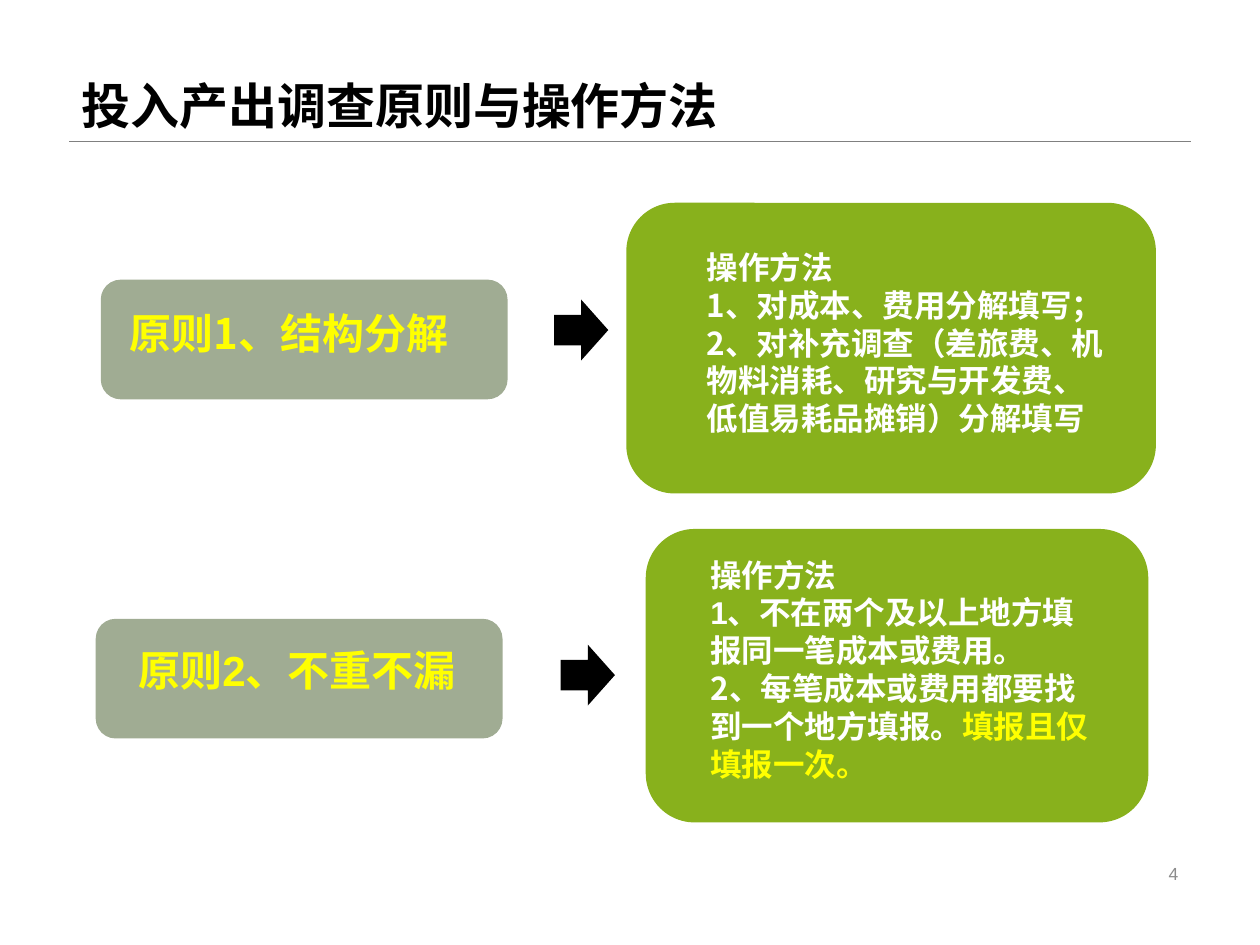
import pptx
import pptx.util
import pptx.dml.color
import pptx.enum.shapes
import pptx.enum.text
import pptx.oxml.ns
import lxml.etree

Pt = pptx.util.Pt
RGBColor = pptx.dml.color.RGBColor
Shape = pptx.enum.shapes.MSO_SHAPE
Anchor = pptx.enum.text.MSO_ANCHOR
Align = pptx.enum.text.PP_ALIGN

BLACK = RGBColor(0x00, 0x00, 0x00)
WHITE = RGBColor(0xFF, 0xFF, 0xFF)
YELLOW = RGBColor(0xFF, 0xFF, 0x00)
GREEN = RGBColor(0x88, 0xB1, 0x1C)
SAGE = RGBColor(0xA0, 0xAC, 0x93)
RULE_GRAY = RGBColor(0x80, 0x80, 0x80)
NUMBER_GRAY = RGBColor(0x8C, 0x8C, 0x8C)

LATIN = "Arial"
SIMPLIFIED = "Noto Sans CJK SC"
TRADITIONAL = "Noto Sans CJK TC"

MARGIN, RULE_TOP, CONTENT_WIDTH = 39.6, 80.6, 640.8
LABEL_SIZE = (232.5, 68.4)
ARROW_SIZE = (31, 34.8)

TITLE = [[("投入产出调查原则与操作方法", LATIN, BLACK)]]
PAGE_NUMBER = [[("4", LATIN, NUMBER_GRAY)]]

ROWS = [
    {
        "label_at": (57.6, 159.8),
        "label_text_at": (67, 172.1, 215.3, 36),
        "label": [[("原则1、结构分解", SIMPLIFIED, YELLOW)]],
        "arrow_at": (316.6, 171.2),
        "panel_at": (357.9, 115.9, 302.6, 166.1),
        "method_at": (396.7, 138.2, 247.7, 116.6),
        "method": [
            [("操作方法", SIMPLIFIED, WHITE)],
            [("1、对成本、费用分解填写；", SIMPLIFIED, WHITE)],
            [("2、对补充调查（差旅费、机物料消耗、研究与开发费、低值易耗品摊销）分解填写", SIMPLIFIED, WHITE)],
        ],
    },
    {
        "label_at": (54.7, 353.6),
        "label_text_at": (72, 365, 210.2, 36),
        "label": [[("原则2、不重不漏", LATIN, YELLOW)]],
        "arrow_at": (320.4, 368.4),
        "panel_at": (369, 302.3, 287.2, 167.7),
        "method_at": (398.9, 313.9, 236.2, 138.2),
        "method": [
            [("操作方法", LATIN, WHITE)],
            [("1、", LATIN, WHITE), ("不在两个及以上地方填报同一笔成本或费用。", SIMPLIFIED, WHITE)],
            [
                ("2、每笔成本或费用都要找到一个地方填报。", SIMPLIFIED, WHITE),
                ("填报且仅填报一次", SIMPLIFIED, YELLOW),
                ("。", TRADITIONAL, YELLOW),
            ],
        ],
    },
]


def add_block(page, preset, frame, color):
    block = page.shapes.add_shape(preset, *map(Pt, frame))
    block.shadow.inherit = False
    block.fill.solid()
    block.fill.fore_color.rgb = color
    block.line.fill.background()


def add_text(page, frame, paragraphs, size, bold=True, anchor=Anchor.TOP, **layout):
    box = page.shapes.add_textbox(*map(Pt, frame))
    box.text_frame.word_wrap = True
    box.text_frame.vertical_anchor = anchor
    for index, spans in enumerate(paragraphs):
        para = box.text_frame.add_paragraph() if index else box.text_frame.paragraphs[0]
        for name, value in layout.items():
            setattr(para, name, value)
        for text, font, color in spans:
            span = para.add_run()
            span.text = text
            for name, value in {"name": font, "size": Pt(size), "bold": bold}.items():
                setattr(span.font, name, value)
            span.font.color.rgb = color
            east_asian = SIMPLIFIED if font == LATIN else font
            lxml.etree.SubElement(
                span.font._element, pptx.oxml.ns.qn("a:ea"), typeface=east_asian
            )


def add_rule(page):
    rule = page.shapes.add_connector(
        pptx.enum.shapes.MSO_CONNECTOR.STRAIGHT,
        Pt(MARGIN), Pt(RULE_TOP), Pt(MARGIN + CONTENT_WIDTH), Pt(RULE_TOP),
    )
    rule.line.color.rgb = RULE_GRAY
    rule.line.width = Pt(0.25)
    lxml.etree.SubElement(rule._element.spPr, pptx.oxml.ns.qn("a:effectLst"))


def main():
    deck = pptx.Presentation()
    deck.slide_width, deck.slide_height = Pt(720), Pt(540)
    page = deck.slides.add_slide(deck.slide_layouts[6])

    add_rule(page)
    add_text(page, (MARGIN, 0, CONTENT_WIDTH, RULE_TOP), TITLE, 28,
             anchor=Anchor.BOTTOM, line_spacing=0.9)
    add_text(page, (508.3, 491, 172.1, 16.6), PAGE_NUMBER, 10, bold=False,
             anchor=Anchor.MIDDLE, alignment=Align.RIGHT)

    for row in ROWS:
        add_block(page, Shape.ROUNDED_RECTANGLE, row["label_at"] + LABEL_SIZE, SAGE)
        add_text(page, row["label_text_at"], row["label"], 24)
        add_block(page, Shape.RIGHT_ARROW, row["arrow_at"] + ARROW_SIZE, BLACK)
        add_block(page, Shape.ROUNDED_RECTANGLE, row["panel_at"], GREEN)
        add_text(page, row["method_at"], row["method"], 18)

    deck.save("out.pptx")


if __name__ == "__main__":
    main()
